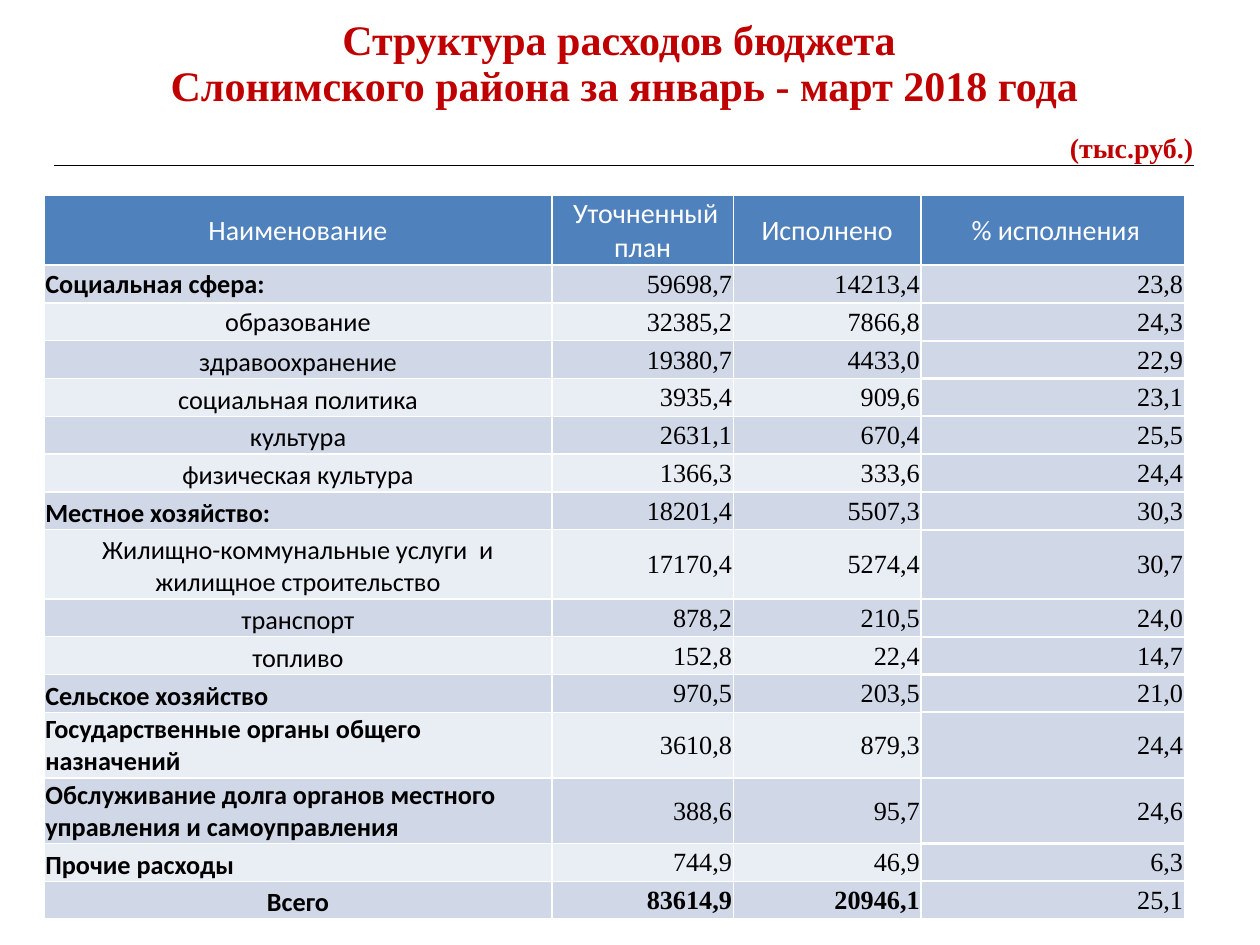
from lxml import etree
from pptx import Presentation
from pptx.dml.color import RGBColor
from pptx.enum.text import MSO_ANCHOR, PP_ALIGN
from pptx.oxml.ns import qn
from pptx.util import Inches, Pt

LEFT, CENTER, RIGHT = PP_ALIGN.LEFT, PP_ALIGN.CENTER, PP_ALIGN.RIGHT
TOP, MIDDLE, BOTTOM = MSO_ANCHOR.TOP, MSO_ANCHOR.MIDDLE, MSO_ANCHOR.BOTTOM
SERIF, SANS = "Times New Roman", "Calibri"
RED, BLUE, DARK, PALE = "C00000", "4F81BD", "D0D8E8", "E9EDF4"
WHITE, BLACK = "FFFFFF", "000000"

HEADS = ["Наименование", " Уточненный план", " Исполнено ", " % исполнения"]
# Kind: "group" is bold at the left, "item" is centred, "total" is bold and centred
ROWS = [
    ("group", 0.3, "Социальная сфера:", "59698,7", "14213,4", "23,8"),
    ("item", 0.3, "образование", "32385,2", "7866,8", "24,3"),
    ("item", 0.3, "здравоохранение", "19380,7", "4433,0", "22,9"),
    ("item", 0.3, "социальная политика", "3935,4", "909,6", "23,1"),
    ("item", 0.3, "культура", "2631,1", "670,4", "25,5"),
    ("item", 0.3, "физическая культура", "1366,3", "333,6", "24,4"),
    ("group", 0.3, "Местное хозяйство:", "18201,4", "5507,3", "30,3"),
    ("item", 0.55, "Жилищно-коммунальные услуги  и жилищное строительство",
     "17170,4", "5274,4", "30,7"),
    ("item", 0.3, "транспорт", "878,2", "210,5", "24,0"),
    ("item", 0.3, "топливо", "152,8", "22,4", "14,7"),
    ("group", 0.3, "Сельское хозяйство", "970,5", "203,5", "21,0"),
    ("group", 0.45, "Государственные органы общего назначений",
     "3610,8", "879,3", "24,4"),
    ("group", 0.52, "Обслуживание долга органов местного управления и самоуправления",
     "388,6", "95,7", "24,6"),
    ("group", 0.3, "Прочие расходы", "744,9", "46,9", "6,3"),
    ("total", 0.3, "Всего", "83614,9", "20946,1", "25,1"),
]


def color(code):
    return RGBColor.from_string(code)


def write(cell, text, size=15, font=SANS, ink=BLACK, bold=False,
          align=CENTER, anchor=MIDDLE):
    cell.vertical_anchor = anchor
    para = cell.text_frame.paragraphs[0]
    para.text = text
    para.alignment = align
    for run in para.runs:
        run.font.size = Pt(size)
        run.font.name = font
        run.font.bold = bold
        run.font.color.rgb = color(ink)


def dress(cell, fill=None, **lines):
    """Set margins, borders (side=(colour, points)) and fill of a cell."""
    cell.margin_left = cell.margin_right = cell.margin_top = Inches(0.01)
    cell.margin_bottom = 0
    props = cell._tc.get_or_add_tcPr()
    for side in "LRTB":
        ink, width = lines.get(side, (None, 0))
        line = etree.SubElement(props, qn(f"a:ln{side}"), w=str(Pt(width)))
        if ink:
            solid = etree.SubElement(line, qn("a:solidFill"))
            etree.SubElement(solid, qn("a:srgbClr"), val=ink)
        else:
            etree.SubElement(line, qn("a:noFill"))
    if fill:
        cell.fill.solid()
        cell.fill.fore_color.rgb = color(fill)
    else:
        cell.fill.background()


def grid(slide, left, top, cols, rows):
    table = slide.shapes.add_table(
        len(rows), len(cols), Inches(left), Inches(top),
        Inches(sum(cols)), Inches(sum(rows))).table
    table.first_row = table.horz_banding = False
    for col, width in zip(table.columns, cols):
        col.width = Inches(width)
    for row, height in zip(table.rows, rows):
        row.height = Inches(height)
    return table


def heading(slide, left, top):
    table = grid(slide, left, top, [3.27, 1.59, 1.38, 1.66, 1.15], [0.76, 0.42])
    for col in range(5):
        dress(table.cell(0, col))
        dress(table.cell(1, col), B=(BLACK, 0.5))
    table.cell(0, 0).merge(table.cell(0, 4))
    look = dict(font=SERIF, ink=RED, bold=True)
    write(table.cell(0, 0),
          "Структура расходов бюджета \nСлонимского района за январь - март 2018 года",
          size=24, anchor=TOP, **look)
    write(table.cell(1, 4), "(тыс.руб.)", size=16, align=RIGHT,
          anchor=BOTTOM, **look)


def budget(slide, left, top):
    table = grid(slide, left, top, [4.03, 1.44, 1.49, 2.09],
                 [0.55] + [row[1] for row in ROWS])
    thin, thick = (WHITE, 1), (WHITE, 1.5)
    last = len(ROWS)

    # Header row
    for col, text in enumerate(HEADS):
        cell = table.cell(0, col)
        dress(cell, BLUE, L=thin, R=thin, T=thin, B=thick)
        write(cell, text, size=16, ink=WHITE)

    # Body rows: shades alternate, the percent column stays dark
    for num, (kind, _, name, *values) in enumerate(ROWS, 1):
        shade = DARK if num % 2 else PALE
        for col, text in enumerate([name, *values]):
            cell = table.cell(num, col)
            share = col == 3
            dress(cell, DARK if share else shade, L=thin, R=thin,
                  T=thick if share or num == 1 else thin,
                  B=thick if share and num < last else thin)
            if col:
                write(cell, text, font=SERIF, align=RIGHT,
                      bold=kind == "total" and not share)
            else:
                write(cell, text, bold=kind != "item",
                      align=LEFT if kind == "group" else CENTER,
                      anchor=MIDDLE if num < 3 else BOTTOM)


def main():
    deck = Presentation()
    deck.slide_width, deck.slide_height = Inches(10), Inches(7.5)
    slide = deck.slides.add_slide(deck.slide_layouts[6])
    heading(slide, 0.43, 0.13)
    budget(slide, 0.35, 1.55)
    deck.save("out.pptx")


if __name__ == "__main__":
    main()
